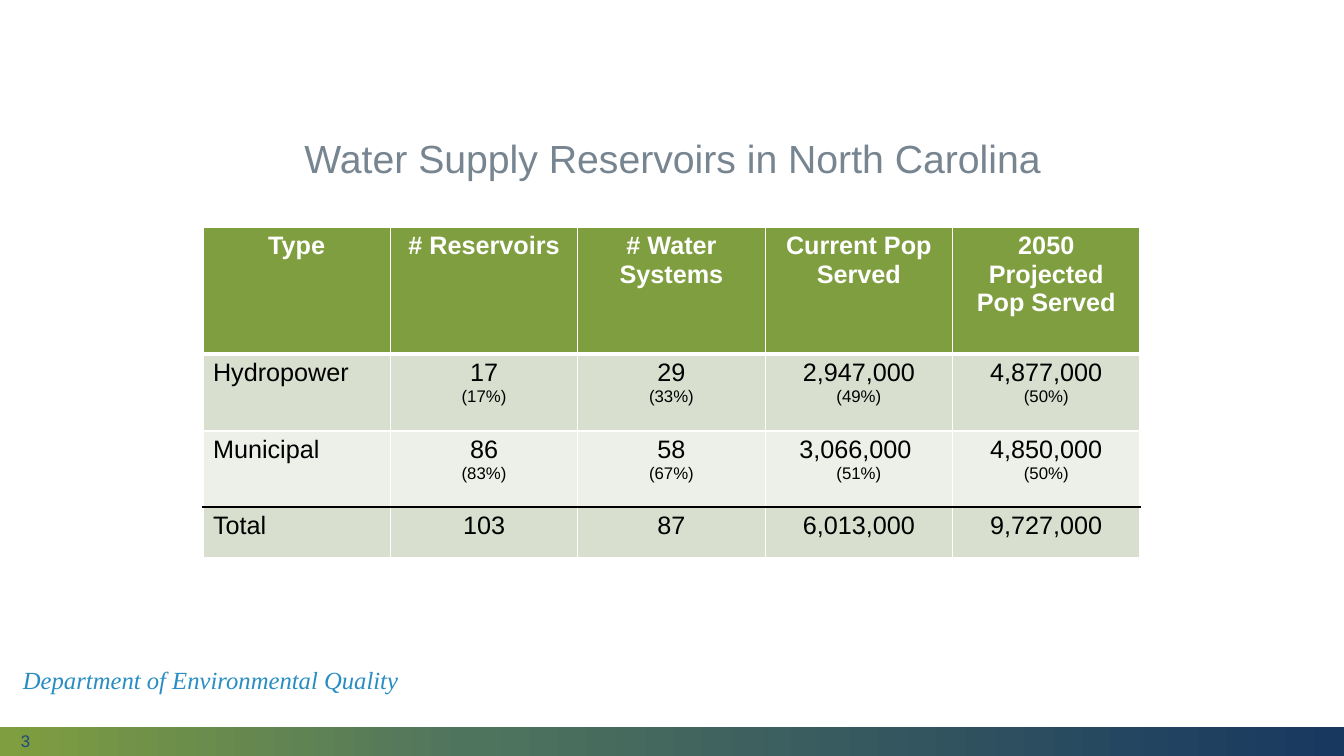
import copy
from collections import namedtuple
from dataclasses import dataclass

import lxml.etree
import pptx
import pptx.dml.color
import pptx.enum.shapes
import pptx.enum.text
import pptx.oxml.ns
import pptx.util

EMU_PER_PX = 914400 / 100.8
ANCHOR = pptx.enum.text.MSO_ANCHOR
ALIGN = pptx.enum.text.PP_ALIGN
Box = namedtuple("Box", "left top width height")


@dataclass(frozen=True)
class Theme:
    """Colours, fonts and type sizes of the slide."""
    sans: str = "Arial"
    serif: str = "Times New Roman"
    heading: str = "778591"
    department: str = "288DC2"
    number: str = "1F497D"
    header: str = "7F9E3F"
    band_dark: str = "D8DFCF"
    band_light: str = "ECF0E8"
    white: str = "FFFFFF"
    black: str = "000000"
    bar_stops: tuple = ((0, "7F9E3F"), (0.35, "4F745E"), (1, "183860"))
    heading_size: float = 28
    department_size: float = 17.6
    cell_size: float = 18
    small_size: float = 12


THEME = Theme()

RESERVOIRS = [
    ["Type", "# Reservoirs", "# Water Systems", "Current Pop Served", "2050 Projected Pop Served"],
    ["Hydropower", "17\n(17%)", "29\n(33%)", "2,947,000\n(49%)", "4,877,000\n(50%)"],
    ["Municipal", "86\n(83%)", "58\n(67%)", "3,066,000 \n(51%)", "4,850,000\n(50%)"],
    ["Total", "103", "87", "6,013,000", "9,727,000"],
]
ROW_HEIGHTS = [127, 77, 76, 51]
ROW_FILLS = [THEME.header, THEME.band_dark, THEME.band_light, THEME.band_dark]
RULES = [(THEME.white, 1), (THEME.white, 3), (THEME.white, 1), (THEME.black, 1), (THEME.white, 1)]


def px(length):
    """Turn pixels into EMU."""
    return pptx.util.Emu(round(length * EMU_PER_PX))


def rgb(colour):
    """Turn a hex string into a colour."""
    return pptx.dml.color.RGBColor.from_string(colour)


def apply(target, values):
    """Set each named attribute on the target."""
    for name, value in values.items():
        setattr(target, name, value)


def write(paragraph, text, colour, size, font=THEME.sans, bold=False, italic=False, **layout):
    """Write one formatted run into a paragraph."""
    apply(paragraph, layout)
    run = paragraph.add_run()
    run.text = text
    apply(run.font, {"name": font, "size": pptx.util.Pt(size), "bold": bold, "italic": italic})
    run.font.color.rgb = rgb(colour)


def add_heading(slide, box):
    """Place the heading in the title placeholder."""
    heading = slide.shapes.title
    apply(heading, {name: px(value) for name, value in box._asdict().items()})
    apply(heading.text_frame, {"vertical_anchor": ANCHOR.TOP, "word_wrap": True,
                               "auto_size": pptx.enum.text.MSO_AUTO_SIZE.NONE})
    write(heading.text_frame.paragraphs[0], "Water Supply Reservoirs in North Carolina",
          THEME.heading, THEME.heading_size, alignment=ALIGN.CENTER, line_spacing=0.9)


def add_label(slide, box, text, colour, size, **style):
    """Place one vertically centred line of text."""
    frame = slide.shapes.add_textbox(*map(px, box)).text_frame
    apply(frame, {"word_wrap": True, "vertical_anchor": ANCHOR.MIDDLE})
    write(frame.paragraphs[0], text, colour, size, **style)


def add_footer(slide, box):
    """Place the department line, the gradient bar and the slide number."""
    bar_height = 29
    bar_top = box.top + box.height - bar_height
    bar = slide.shapes.add_shape(pptx.enum.shapes.MSO_SHAPE.RECTANGLE, px(box.left), px(bar_top),
                                 px(box.width), px(bar_height))
    bar.shadow.inherit = False
    bar.line.fill.background()
    bar.fill.gradient()
    bar.fill.gradient_angle = 0
    stop_list = bar._element.find(".//" + pptx.oxml.ns.qn("a:gsLst"))
    stop_list.append(copy.deepcopy(stop_list[-1]))
    for stop, (position, colour) in zip(bar.fill.gradient_stops, THEME.bar_stops):
        stop.position = position
        stop.color.rgb = rgb(colour)
    add_label(slide, Box(box.left + 11, bar_top + 6, 302, 15), "3", THEME.number, THEME.small_size)
    add_label(slide, Box(box.left + 13, box.top, 413, 41), "Department of Environmental Quality",
              THEME.department, THEME.department_size, font=THEME.serif, italic=True,
              line_spacing=0.9)


def add_border(cell, side, colour, width):
    """Draw one side of a cell."""
    qn = pptx.oxml.ns.qn
    line = lxml.etree.SubElement(cell._tc.get_or_add_tcPr(), qn("a:ln" + side),
                                 w=str(pptx.util.Pt(width)))
    fill = lxml.etree.SubElement(line, qn("a:solidFill"))
    lxml.etree.SubElement(fill, qn("a:srgbClr"), val=colour)


def fill_cell(cell, text, row, column):
    """Format one table cell and write its lines."""
    side_rule = (THEME.white, 1)
    borders = {"L": side_rule, "R": side_rule, "T": RULES[row], "B": RULES[row + 1]}
    for side, rule in borders.items():
        add_border(cell, side, *rule)
    cell.fill.solid()
    cell.fill.fore_color.rgb = rgb(ROW_FILLS[row])
    is_header = row == 0
    alignment = ALIGN.CENTER if is_header or column else ALIGN.LEFT
    for index, line in enumerate(text.split("\n")):
        paragraph = cell.text_frame.add_paragraph() if index else cell.text_frame.paragraphs[0]
        write(paragraph, line, THEME.white if is_header else THEME.black,
              THEME.small_size if index else THEME.cell_size,
              bold=is_header, alignment=alignment)


def add_reservoir_table(slide, box):
    """Place the reservoir table with equal columns."""
    table = slide.shapes.add_table(len(RESERVOIRS), len(RESERVOIRS[0]), *map(px, box)).table
    table.horz_banding = False
    for column in table.columns:
        column.width = px(box.width / len(RESERVOIRS[0]))
    for row, texts in enumerate(RESERVOIRS):
        table.rows[row].height = px(ROW_HEIGHTS[row])
        for column, text in enumerate(texts):
            fill_cell(table.cell(row, column), text, row, column)


def main():
    """Build and save the slide."""
    deck = pptx.Presentation()
    apply(deck, {"slide_width": px(1344), "slide_height": px(756)})
    slide = deck.slides.add_slide(deck.slide_layouts.get_by_name("Title Only"))
    add_footer(slide, Box(0, 661, 1344, 95))
    add_heading(slide, Box(93, 135, 1159, 553))
    add_reservoir_table(slide, Box(203, 227, 937, sum(ROW_HEIGHTS)))
    deck.save("out.pptx")


if __name__ == "__main__":
    main()
